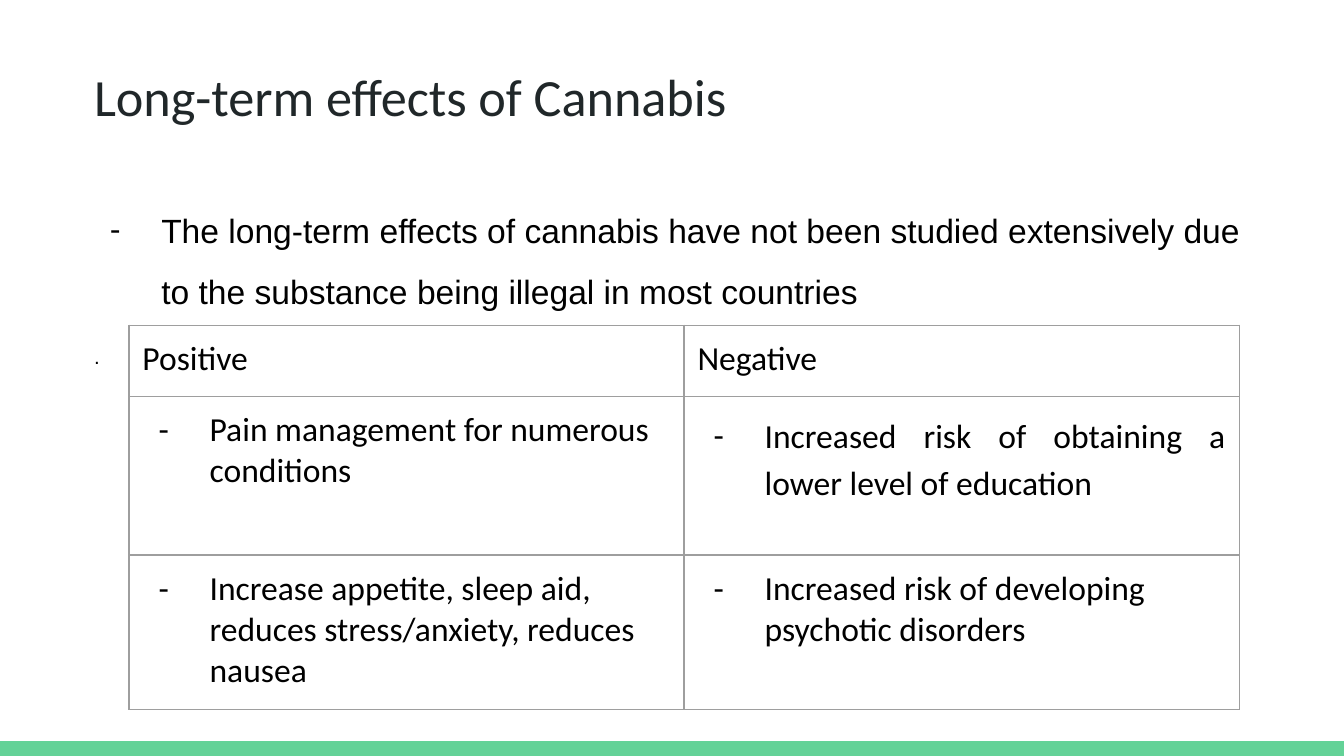
from dataclasses import dataclass

import pptx
import pptx.dml.color
import pptx.enum.shapes
import pptx.enum.text
import pptx.oxml
import pptx.oxml.ns
import pptx.util
from pptx.util import Inches, Pt

RGBColor = pptx.dml.color.RGBColor
Align = pptx.enum.text.PP_ALIGN

GREEN = RGBColor(0x63, 0xD2, 0x97)
TITLE_INK = RGBColor(0x20, 0x27, 0x29)
BLACK = RGBColor(0, 0, 0)
BORDER = RGBColor(0x9E, 0x9E, 0x9E)
MARGIN = Inches(0.1)
PAGE_WIDTH = Inches(10)
PAGE_HEIGHT = Inches(10 * 9 / 16)


@dataclass
class Entry:
    text: str
    font: str = "Calibri"
    size: float = 18
    color: RGBColor = BLACK
    dash: bool = False
    align: Align = Align.LEFT
    line_spacing: float = 1.0
    before: float = 0
    after: float = 0


HEADING = [
    Entry("Long-term effects of Cannabis", size=28, color=TITLE_INK),
    Entry(
        "The long-term effects of cannabis have not been studied extensively due "
        "to the substance being illegal in most countries",
        font="Arial", dash=True, line_spacing=1.5, before=33.5,
    ),
    Entry(".", font="Arial", size=11, line_spacing=1.5, before=11, after=11),
]

EFFECTS = [
    [Entry("Positive"), Entry("Negative")],
    [
        Entry("Pain management for numerous conditions", dash=True),
        Entry("Increased risk of obtaining a lower level of education",
              dash=True, align=Align.JUSTIFY, line_spacing=1.15, before=8),
    ],
    [
        Entry("Increase appetite, sleep aid, reduces stress/anxiety, reduces nausea",
              dash=True),
        Entry("Increased risk of developing psychotic disorders", dash=True),
    ],
]
ROW_HEIGHTS = [0.53, 1.18, 1.15]
COLUMN_WIDTH = 4.13


def append_xml(parent, xml: str) -> None:
    namespace = pptx.oxml.ns.nsdecls("a")
    parent.append(pptx.oxml.parse_xml(xml.replace("NS", namespace, 1)))


def add_dash(paragraph, entry: Entry) -> None:
    properties = paragraph._p.get_or_add_pPr()
    properties.set("marL", str(Inches(0.5)))
    properties.set("indent", str(Inches(-0.38)))
    append_xml(properties, f'<a:buClr NS><a:srgbClr val="{BLACK}"/></a:buClr>')
    append_xml(properties, f'<a:buSzPts NS val="{entry.size * 100}"/>')
    append_xml(properties, '<a:buFont NS typeface="Calibri"/>')
    append_xml(properties, '<a:buChar NS char="-"/>')


def write_entry(paragraph, entry: Entry) -> None:
    paragraph.text = entry.text
    paragraph.alignment = entry.align
    paragraph.line_spacing = entry.line_spacing
    paragraph.space_before = Pt(entry.before)
    paragraph.space_after = Pt(entry.after)
    for span in paragraph.runs:
        span.font.name = entry.font
        span.font.size = Pt(entry.size)
        span.font.color.rgb = entry.color
    if entry.dash:
        add_dash(paragraph, entry)


def set_margins(target) -> None:
    target.margin_left = target.margin_right = MARGIN
    target.margin_top = target.margin_bottom = MARGIN


def draw_footer_bar(page) -> None:
    height = Inches(0.11)
    bar = page.shapes.add_shape(
        pptx.enum.shapes.MSO_SHAPE.RECTANGLE,
        Inches(0), PAGE_HEIGHT - height, PAGE_WIDTH, height,
    )
    bar.shadow.inherit = False
    bar.fill.solid()
    bar.fill.fore_color.rgb = GREEN
    bar.line.fill.background()


def write_heading(page) -> None:
    title = page.shapes.title
    title.left, title.top = Inches(0.6), Inches(0.38)
    title.width, title.height = Inches(8.82), Inches(0.63)
    frame = title.text_frame
    frame.word_wrap = True
    frame.auto_size = pptx.enum.text.MSO_AUTO_SIZE.NONE
    frame.vertical_anchor = pptx.enum.text.MSO_ANCHOR.TOP
    set_margins(frame)
    for index, entry in enumerate(HEADING):
        paragraph = frame.add_paragraph() if index else frame.paragraphs[0]
        write_entry(paragraph, entry)


def format_cell(cell, entry: Entry) -> None:
    set_margins(cell)
    write_entry(cell.text_frame.paragraphs[0], entry)
    properties = cell._tc.get_or_add_tcPr()
    for side in ("lnL", "lnR", "lnT", "lnB"):
        append_xml(
            properties,
            f'<a:{side} NS w="{Pt(0.75)}"><a:solidFill>'
            f'<a:srgbClr val="{BORDER}"/></a:solidFill></a:{side}>',
        )
    cell.fill.background()


def draw_effects_table(page) -> None:
    columns = len(EFFECTS[0])
    table = page.shapes.add_table(
        len(EFFECTS), columns, Inches(0.96), Inches(2.42),
        Inches(COLUMN_WIDTH * columns), Inches(sum(ROW_HEIGHTS)),
    ).table
    table.first_row = table.horz_banding = False
    for column in table.columns:
        column.width = Inches(COLUMN_WIDTH)
    for row, height, entries in zip(table.rows, ROW_HEIGHTS, EFFECTS):
        row.height = Inches(height)
        for cell, entry in zip(row.cells, entries):
            format_cell(cell, entry)


def main() -> None:
    deck = pptx.Presentation()
    deck.slide_width, deck.slide_height = PAGE_WIDTH, PAGE_HEIGHT
    page = deck.slides.add_slide(deck.slide_layouts[5])
    draw_footer_bar(page)
    write_heading(page)
    draw_effects_table(page)
    deck.save("out.pptx")


if __name__ == "__main__":
    main()
